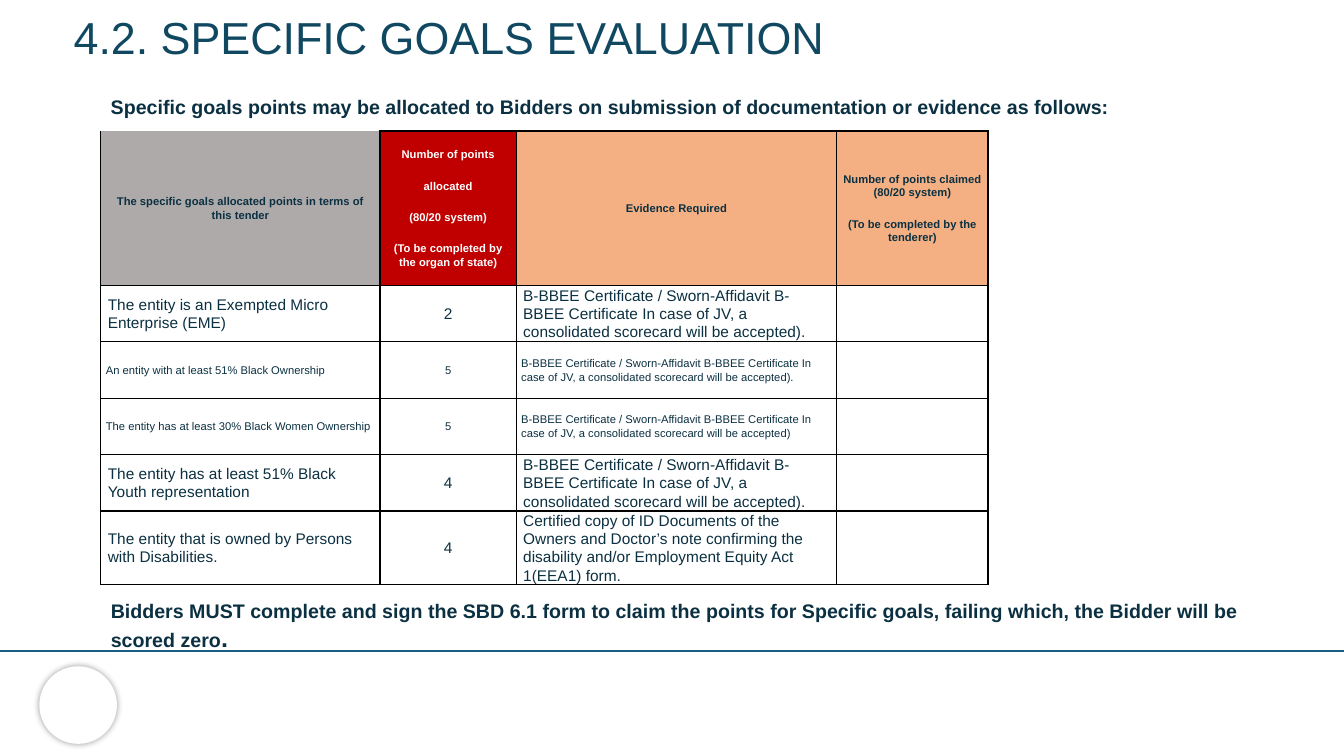
from lxml.etree import SubElement
from pptx import Presentation
from pptx.dml.color import RGBColor
from pptx.enum.shapes import MSO_CONNECTOR, MSO_SHAPE
from pptx.enum.text import MSO_ANCHOR, MSO_AUTO_SIZE, PP_ALIGN
from pptx.oxml import parse_xml
from pptx.oxml.ns import nsdecls, qn
from pptx.util import Inches, Pt

TITLE_BLUE = RGBColor(0x10, 0x48, 0x62)
TEXT_BLUE = RGBColor(0x0B, 0x30, 0x41)
RULE_BLUE = RGBColor(0x15, 0x60, 0x82)
GREY = RGBColor(0xAE, 0xAA, 0xAA)
RED = RGBColor(0xC0, 0x00, 0x00)
ORANGE = RGBColor(0xF4, 0xB0, 0x83)
WHITE = RGBColor(0xFF, 0xFF, 0xFF)
BLACK = RGBColor(0x00, 0x00, 0x00)
FONT = "Arial"

COLUMN_WIDTHS = [2.77, 1.35, 3.18, 1.5]
HEADER_HEIGHT = 1.53
GOAL_HEIGHT = 0.56

HEADERS = [
    (["The specific goals allocated points in terms of this tender"], GREY, TEXT_BLUE),
    (["Number of points", "allocated", "(80/20 system)",
      "(To be completed by the organ of state)"], RED, WHITE),
    (["Evidence Required"], ORANGE, TEXT_BLUE),
    (["Number of points claimed (80/20 system)",
      "(To be completed by the tenderer)"], ORANGE, TEXT_BLUE),
]
CERTIFICATE = ("B-BBEE Certificate / Sworn-Affidavit B-BBEE Certificate "
               "In case of JV, a consolidated scorecard will be accepted)")
DISABILITY_EVIDENCE = ("Certified copy of ID Documents of the Owners and Doctor’s note "
                       "confirming the disability and/or Employment Equity Act 1(EEA1) form.")
GOALS = [
    ("The entity is an Exempted Micro Enterprise (EME)", "2", CERTIFICATE + ".", 11),
    ("An entity with at least 51% Black Ownership", "5", CERTIFICATE + ".", 8),
    ("The entity has at least 30% Black Women Ownership", "5", CERTIFICATE, 8),
    ("The entity has at least 51% Black Youth representation", "4", CERTIFICATE + ".", 11),
    ("The entity that is owned by Persons with Disabilities.", "4", DISABILITY_EVIDENCE, 11),
]


def style_font(font, size, color, bold=False):
    font.name = FONT
    font.size = Pt(size)
    font.bold = bold
    font.color.rgb = color


def place(shape, left, top, width, height):
    shape.left, shape.top = Inches(left), Inches(top)
    shape.width, shape.height = Inches(width), Inches(height)


def add_footer(slide, left, top, width):
    rule = slide.shapes.add_connector(
        MSO_CONNECTOR.STRAIGHT, Inches(left + width), Inches(top), Inches(left), Inches(top))
    rule.line.color.rgb = RULE_BLUE
    rule.line.width = Pt(1.5)
    SubElement(rule._element.spPr, qn("a:effectLst"))

    emblem = slide.shapes.add_shape(
        MSO_SHAPE.OVAL, Inches(left + 0.39), Inches(top + 0.15), Inches(0.77), Inches(0.77))
    emblem.fill.solid()
    emblem.fill.fore_color.rgb = WHITE
    emblem.line.fill.background()
    emblem.shadow.inherit = False
    glow = parse_xml(
        f'<a:outerShdw {nsdecls("a")} blurRad="{Pt(5)}" dist="0" dir="0" algn="ctr" '
        f'rotWithShape="0"><a:srgbClr val="{BLACK}"><a:alpha val="40000"/>'
        '</a:srgbClr></a:outerShdw>')
    emblem._element.spPr.find(qn("a:effectLst")).append(glow)


def add_title(slide, left, top, width, height):
    title = slide.shapes.title
    place(title, left, top, width, height)
    frame = title.text_frame
    frame.text = "4.2. SPECIFIC GOALS EVALUATION"
    frame.word_wrap = True
    frame.auto_size = MSO_AUTO_SIZE.NONE
    frame.vertical_anchor = MSO_ANCHOR.TOP
    heading = frame.paragraphs[0]
    heading.alignment = PP_ALIGN.LEFT
    style_font(heading.font, 32, TITLE_BLUE)


def add_statement(slide, left, top, width, height, text):
    statement = slide.shapes.add_textbox(
        Inches(left), Inches(top), Inches(width), Inches(height))
    statement.text_frame.word_wrap = True
    sentence = statement.text_frame.paragraphs[0]
    sentence.add_run().text = text
    style_font(sentence.font, 14, TEXT_BLUE, bold=True)
    return sentence


def set_borders(cell, hidden_sides=""):
    properties = cell._tc.get_or_add_tcPr()
    for side in "LRTB":
        border = SubElement(properties, qn(f"a:ln{side}"), w=str(Pt(1)))
        if side in hidden_sides:
            SubElement(border, qn("a:noFill"))
        else:
            fill = SubElement(border, qn("a:solidFill"))
            SubElement(fill, qn("a:srgbClr"), val=str(BLACK))


def fill_cell(cell, lines, size, color, margin, alignment, bold=False):
    cell.vertical_anchor = MSO_ANCHOR.MIDDLE
    cell.margin_left = cell.margin_right = Inches(margin)
    cell.margin_top = cell.margin_bottom = 0
    cell.text_frame.text = "\n".join(lines)
    for index, paragraph in enumerate(cell.text_frame.paragraphs):
        paragraph.alignment = alignment
        paragraph.line_spacing = 1.07
        if index:
            paragraph.space_before = Pt(12.8)
        style_font(paragraph.font, size, color, bold)


def add_goals_table(slide, left, top):
    height = HEADER_HEIGHT + GOAL_HEIGHT * len(GOALS)
    table = slide.shapes.add_table(
        len(GOALS) + 1, len(HEADERS), Inches(left), Inches(top),
        Inches(sum(COLUMN_WIDTHS)), Inches(height)).table
    table.first_row = table.horz_banding = False
    for column, width in zip(table.columns, COLUMN_WIDTHS):
        column.width = Inches(width)
    for index, row in enumerate(table.rows):
        row.height = Inches(GOAL_HEIGHT if index else HEADER_HEIGHT)

    for column, (lines, background, color) in enumerate(HEADERS):
        cell = table.cell(0, column)
        set_borders(cell, hidden_sides="" if column else "T")
        cell.fill.solid()
        cell.fill.fore_color.rgb = background
        fill_cell(cell, lines, 8, color, 0.05, PP_ALIGN.CENTER, bold=True)

    for row, (goal, points, evidence, size) in enumerate(GOALS, 1):
        margin = 0.07 if size == 11 else 0.05
        for column, text in enumerate([goal, points, evidence, ""]):
            cell = table.cell(row, column)
            set_borders(cell)
            cell.fill.background()
            alignment = PP_ALIGN.CENTER if column == 1 else PP_ALIGN.LEFT
            fill_cell(cell, [text], size, TEXT_BLUE, margin, alignment)


def build_evaluation_slide(presentation):
    slide = presentation.slides.add_slide(presentation.slide_layouts[5])
    add_footer(slide, 0, 6.46, 13.33)
    add_title(slide, 0.63, 0.05, 8.28, 0.64)
    add_goals_table(slide, 1, 1.3)
    add_statement(
        slide, 1, 0.89, 12.33, 0.34,
        "Specific goals points may be allocated to Bidders on submission of "
        "documentation or evidence as follows:")
    warning = add_statement(
        slide, 1, 5.89, 11.52, 0.66,
        "Bidders MUST complete and sign the SBD 6.1 form to claim the points for "
        "Specific goals, failing which, the Bidder will be scored zero")
    full_stop = warning.add_run()
    full_stop.text = "."
    full_stop.font.size = Pt(18)


def main():
    presentation = Presentation()
    presentation.slide_width = Inches(13.33)
    presentation.slide_height = Inches(7.5)
    build_evaluation_slide(presentation)
    presentation.save("out.pptx")


if __name__ == "__main__":
    main()
